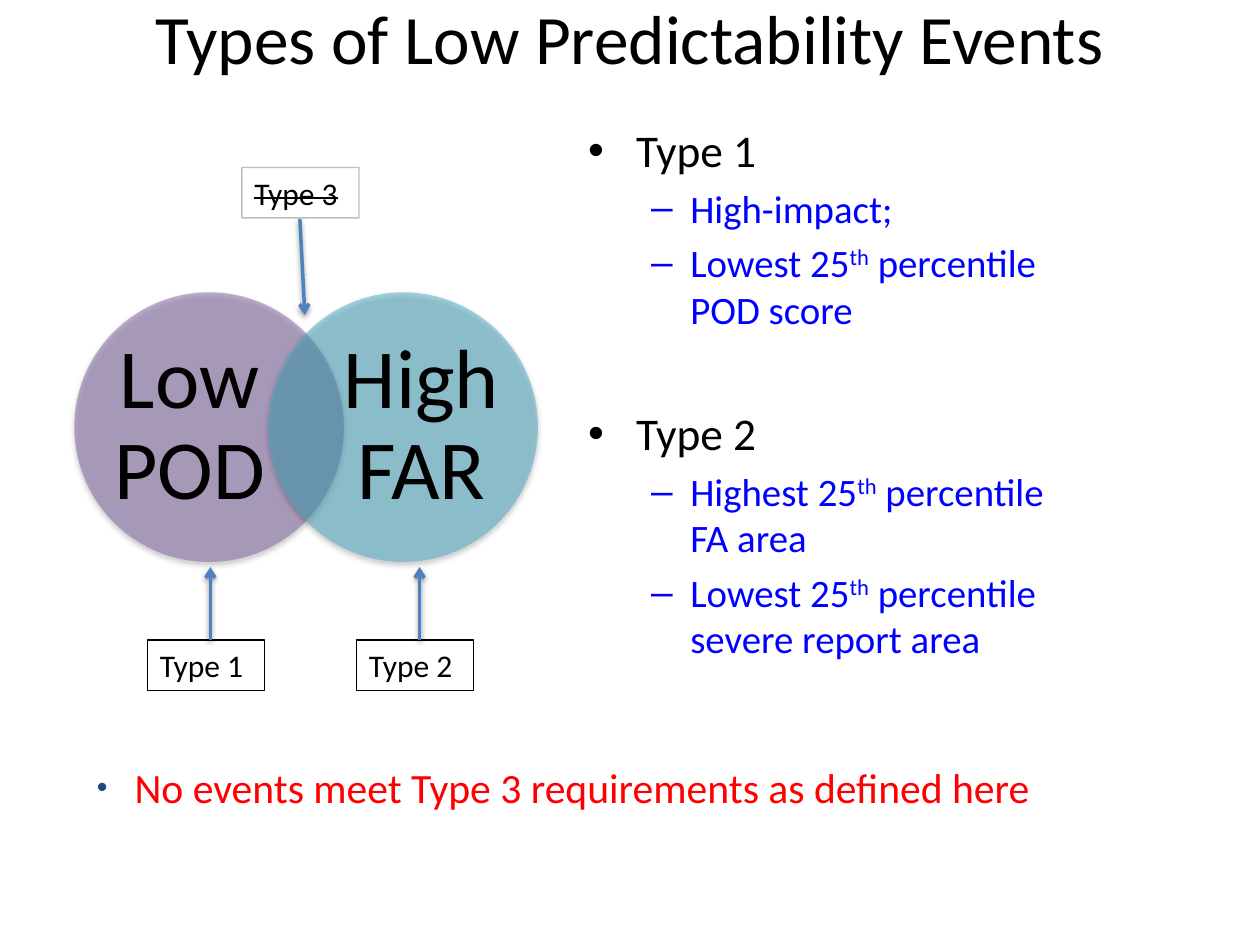
"""Build a slide on the types of low predictability events."""
from lxml import etree
from pptx import Presentation
from pptx.dml.color import RGBColor
from pptx.enum.shapes import MSO_CONNECTOR, MSO_SHAPE
from pptx.enum.text import MSO_ANCHOR, MSO_AUTO_SIZE, PP_ALIGN
from pptx.oxml import parse_xml
from pptx.oxml.ns import qn
from pptx.util import Inches, Pt

STRAIGHT = MSO_CONNECTOR.STRAIGHT
OVAL = MSO_SHAPE.OVAL
MIDDLE = MSO_ANCHOR.MIDDLE
GROW = MSO_AUTO_SIZE.SHAPE_TO_FIT_TEXT
CENTER = PP_ALIGN.CENTER

COLORS = {"text": "000000", "detail": "0000FF", "note": "FF0000", "bullet": "1F497D",
          "arrow": "4F81BD", "pod": "8064A2", "far": "4BACC6"}
SHADOW = (
    '<a:effectLst xmlns:a="http://schemas.openxmlformats.org/drawingml/2006/main">'
    '<a:outerShdw blurRad="39370" dist="20320" dir="5400000" rotWithShape="0">'
    '<a:srgbClr val="000000"><a:alpha val="38000"/></a:srgbClr>'
    '</a:outerShdw></a:effectLst>')


def add_run(paragraph, text, size, color, **attributes):
    run = paragraph.add_run()
    run.text = text
    for name, value in {"name": "Calibri", "size": Pt(size)}.items():
        setattr(run.font, name, value)
    run.font.color.rgb = RGBColor.from_string(COLORS[color])
    for name, value in attributes.items():
        run.font._element.set(name, value)


def add_bullet(paragraph, mark, margin, hanging, before, color=None, percent=100):
    paragraph.space_before = Pt(before)
    properties = paragraph._p.get_or_add_pPr()
    properties.set("marL", str(Inches(margin)))
    properties.set("indent", str(-Inches(hanging)))
    if color:
        bullet_color = etree.SubElement(properties, qn("a:buClr"))
        etree.SubElement(bullet_color, qn("a:srgbClr"), val=COLORS[color])
    etree.SubElement(properties, qn("a:buSzPct"), val=str(percent * 1000))
    etree.SubElement(properties, qn("a:buFont"), typeface="Arial")
    etree.SubElement(properties, qn("a:buChar"), char=mark)


deck = Presentation()
deck.slide_width, deck.slide_height = Inches(10), Inches(7.5)
slide = deck.slides.add_slide(deck.slide_layouts[5])
shapes = slide.shapes

title = shapes.title
frame = {"left": 1.04, "top": -0.33, "width": 7.92, "height": 1.25}
for side, length in frame.items():
    setattr(title, side, Inches(length))
title.text_frame.vertical_anchor = MIDDLE
heading = title.text_frame.paragraphs[0]
heading.alignment = CENTER
add_run(heading, "Types of Low Predictability Events", 39.6, "text")

for label, color, circle_left, label_left in [
        ("Low POD", "pod", 0.59, 0.87), ("High FAR", "far", 2.13, 2.71)]:
    circle = shapes.add_shape(OVAL, Inches(circle_left), Inches(2.32), Inches(2.14), Inches(2.14))
    circle.fill.solid()
    circle.fill.fore_color.rgb = RGBColor.from_string(COLORS[color])
    fill_color = circle._element.spPr.find(".//" + qn("a:srgbClr"))
    etree.SubElement(fill_color, qn("a:alpha"), val="50000")
    circle.line.fill.background()
    circle._element.spPr.append(parse_xml(SHADOW))

    caption = shapes.add_textbox(Inches(label_left), Inches(2.57), Inches(1.27), Inches(1.63))
    caption_format = {"word_wrap": True, "vertical_anchor": MIDDLE, "margin_left": 0,
                      "margin_right": 0, "margin_top": 0, "margin_bottom": 0}
    for name, value in caption_format.items():
        setattr(caption.text_frame, name, value)
    words = caption.text_frame.paragraphs[0]
    words.alignment = CENTER
    words.line_spacing = 0.9
    add_run(words, label, 48, "text")

definitions = shapes.add_textbox(Inches(4.57), Inches(0.92), Inches(3.85), Inches(4.95)).text_frame
definitions.word_wrap = True
for index, (event_type, before, criteria) in enumerate([
        ("Type 1", 5.2, [("High-impact;",), ("Lowest 25", "th", " percentile POD score")]),
        ("Type 2", 42, [("Highest 25", "th", " percentile FA area"),
                        ("Lowest 25", "th", " percentile severe report area")])]):
    type_line = definitions.add_paragraph() if index else definitions.paragraphs[0]
    add_bullet(type_line, "•", 0.38, 0.38, before)
    add_run(type_line, event_type, 25.9, "text")
    for criterion in criteria:
        detail = definitions.add_paragraph()
        detail.level = 1
        add_bullet(detail, "–", 0.81, 0.31, 4.4)
        for part in criterion:
            raised = {"baseline": "30000"} if part == "th" else {}
            add_run(detail, part, 22.2, "detail", **raised)

for label, left, top, start, end, dropped in [
        ("Type 1", 1.17, 5.08, (1.67, 5.08), (1.67, 4.5), False),
        ("Type 2", 2.83, 5.08, (3.33, 5.08), (3.33, 4.5), False),
        ("Type 3", 1.92, 1.33, (2.38, 1.74), (2.42, 2.5), True)]:
    tag = shapes.add_textbox(Inches(left), Inches(top), Inches(0.93), Inches(0.4))
    tag.text_frame.word_wrap = False
    tag.text_frame.auto_size = GROW
    tag.line.color.rgb = RGBColor.from_string(COLORS["text"])
    tag.line.width = Pt(0.75)
    if dropped:
        border_color = tag._element.spPr.find(".//" + qn("a:srgbClr"))
        etree.SubElement(border_color, qn("a:alpha"), val="25000")
    strike = {"strike": "sngStrike"} if dropped else {}
    add_run(tag.text_frame.paragraphs[0], label, 18, "text", **strike)

    arrow = shapes.add_connector(STRAIGHT, *map(Inches, start + end))
    arrow.line.color.rgb = RGBColor.from_string(COLORS["arrow"])
    arrow.line.width = Pt(2)
    etree.SubElement(arrow.line._get_or_add_ln(), qn("a:tailEnd"), type="arrow")
    arrow._element.spPr.append(parse_xml(SHADOW))

note = shapes.add_textbox(Inches(0.67), Inches(6), Inches(8.08), Inches(0.58)).text_frame
note.word_wrap = True
add_bullet(note.paragraphs[0], "•", 0.3, 0.3, 6, "bullet", 73)
add_run(note.paragraphs[0], "No events meet Type 3 requirements as defined here", 23.8, "note")

deck.save("out.pptx")
